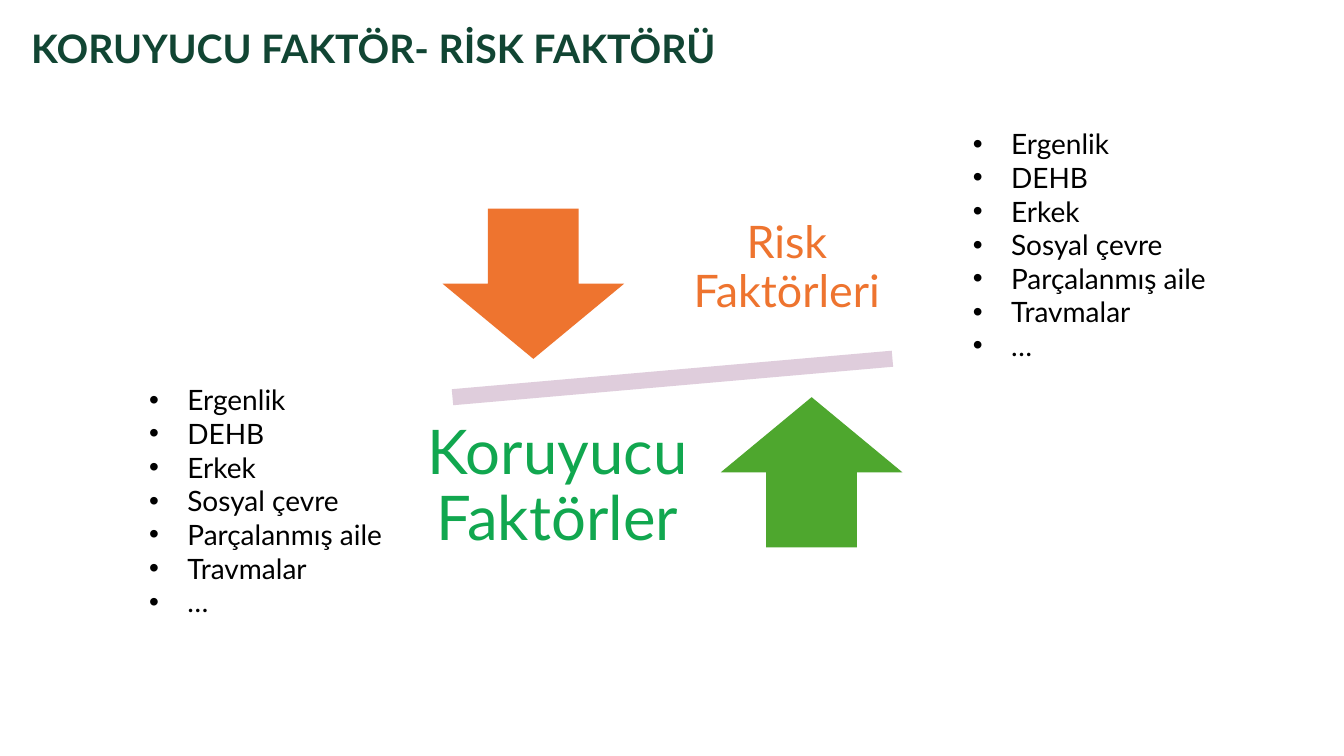
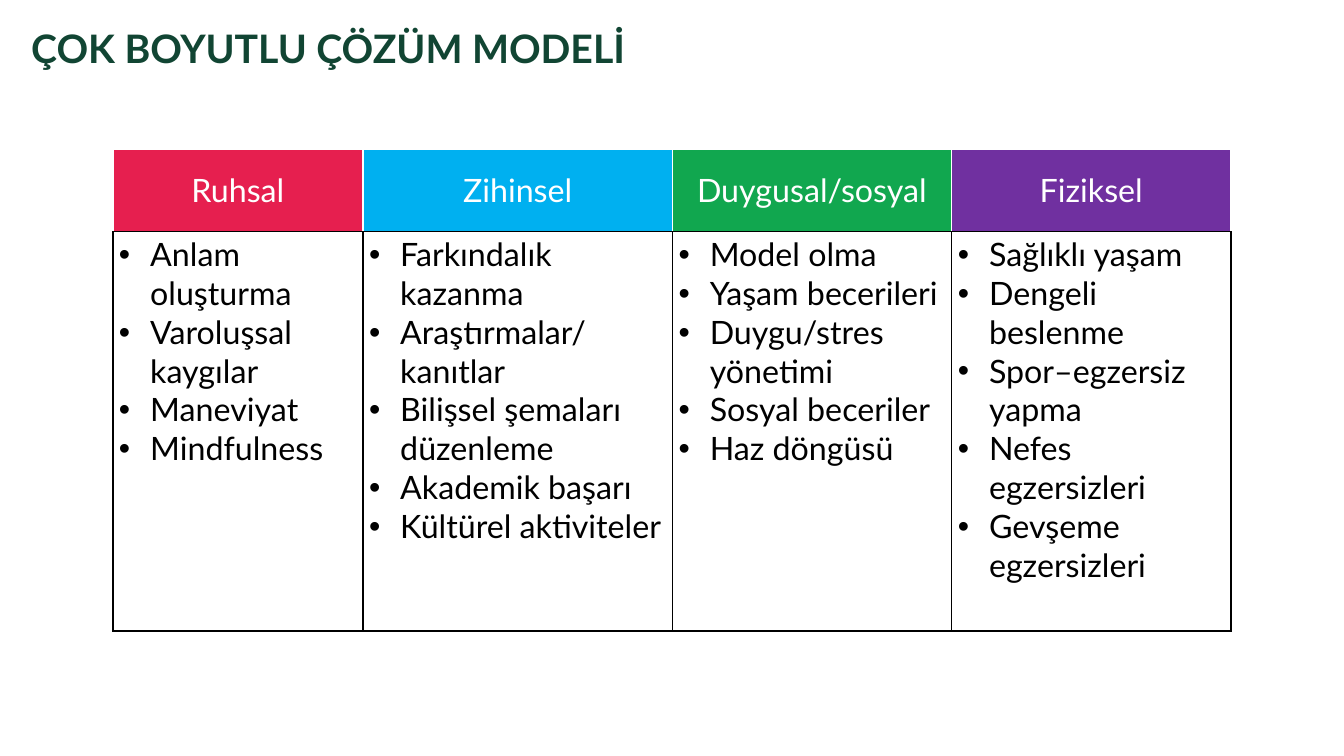
from dataclasses import dataclass

from lxml.etree import SubElement
from pptx import Presentation
from pptx.dml.color import RGBColor
from pptx.enum.shapes import MSO_SHAPE
from pptx.enum.text import MSO_ANCHOR, MSO_AUTO_SIZE, PP_ALIGN
from pptx.oxml.ns import qn
from pptx.presentation import Presentation as Deck
from pptx.slide import Slide
from pptx.table import _Cell as Cell
from pptx.text.text import TextFrame, _Paragraph as Paragraph
from pptx.util import Inches, Pt

FONT = "Lato"
BLACK, WHITE = "000000", "FFFFFF"
TITLE_GREEN, ORANGE, GREEN = "114533", "EE742F", "11A74F"
LEAF, MAUVE = "4EA72E", "DFCDDC"
FACTORS = ["Ergenlik", "DEHB", "Erkek", "Sosyal çevre", "Parçalanmış aile", "Travmalar", "…"]


@dataclass(frozen=True)
class Area:
    """A place on the slide, in inches."""

    left: float
    top: float
    width: float
    height: float

    def lengths(self) -> tuple[Inches, ...]:
        """Give the place as lengths."""
        return tuple(Inches(value) for value in (self.left, self.top, self.width, self.height))


@dataclass(frozen=True)
class BalancePart:
    """A solid shape of the balance."""

    kind: MSO_SHAPE
    area: Area
    fill: str
    rotation: float = 0


@dataclass(frozen=True)
class Label:
    """A large centred caption."""

    text: str
    area: Area
    size: int
    color: str
    inset: float


@dataclass(frozen=True)
class Dimension:
    """A column of the solution model."""

    name: str
    fill: str
    width: float
    points: list[str]


BALANCE = [
    BalancePart(MSO_SHAPE.MATH_MINUS, Area(3.69, 3.41, 5.96, 0.68), MAUVE, 355),
    BalancePart(MSO_SHAPE.DOWN_ARROW, Area(4.39, 2.07, 1.8, 1.49), ORANGE),
    BalancePart(MSO_SHAPE.UP_ARROW, Area(7.15, 3.94, 1.8, 1.49), LEAF),
]
LABELS = [
    Label("Risk Faktörleri", Area(6.44, 1.88, 2.73, 1.57), 32, ORANGE, 0.25),
    Label("Koruyucu Faktörler", Area(3.83, 4.05, 3.4, 1.57), 44, GREEN, 0.34),
]
FACTOR_AREAS = [Area(1.38, 3.75, 2.65, 2.46), Area(9.55, 1.21, 2.94, 2.46)]
TABLE_AREA = Area(1.12, 1.48, 11.09, 4.78)
HEADER_HEIGHT = 0.82
DIMENSIONS = [
    Dimension("Ruhsal", "E61F4F", 2.48, [
        "Anlam oluşturma", "Varoluşsal kaygılar", "Maneviyat", "Mindfulness"]),
    Dimension("Zihinsel", "00B0F0", 3.07, [
        "Farkındalık kazanma", "Araştırmalar/kanıtlar", "Bilişsel şemaları düzenleme",
        "Akademik başarı", "Kültürel aktiviteler"]),
    Dimension("Duygusal/sosyal", GREEN, 2.77, [
        "Model olma", "Yaşam becerileri", "Duygu/stres yönetimi",
        "Sosyal beceriler", "Haz döngüsü"]),
    Dimension("Fiziksel", "7030A0", 2.77, [
        "Sağlıklı yaşam", "Dengeli beslenme", "Spor–egzersiz yapma",
        "Nefes egzersizleri", "Gevşeme egzersizleri"]),
]


def rgb(color: str) -> RGBColor:
    """Turn a hex string into a colour."""
    return RGBColor.from_string(color)


def add_span(para: Paragraph, text: str, size: float, color: str, bold: bool = False) -> None:
    """Add one formatted run."""
    span = para.add_run()
    span.text = text
    span.font.name = FONT
    span.font.size = Pt(size)
    span.font.bold = bold
    span.font.color.rgb = rgb(color)


def add_bullets(frame: TextFrame, items: list[str], size: float, indent: float,
                align: PP_ALIGN) -> None:
    """Fill a frame with a bulleted list."""
    for index, item in enumerate(items):
        para = frame.add_paragraph() if index else frame.paragraphs[0]
        properties = para._p.get_or_add_pPr()
        properties.set("marL", str(Inches(indent)))
        properties.set("indent", str(-Inches(indent)))
        SubElement(properties, qn("a:buFont"), typeface="Arial")
        SubElement(properties, qn("a:buChar"), char="•")
        para.alignment = align
        add_span(para, item, size, BLACK)


def add_page(deck: Deck, title: str) -> Slide:
    """Add a page with the shared title style."""
    page = deck.slides.add_slide(deck.slide_layouts[5])
    box = page.shapes.title
    box.left, box.top, box.width, box.height = Area(0.21, 0.19, 10.58, 0.57).lengths()
    frame = box.text_frame
    frame.auto_size = MSO_AUTO_SIZE.NONE
    frame.vertical_anchor = MSO_ANCHOR.TOP
    para = frame.paragraphs[0]
    para.alignment = PP_ALIGN.LEFT
    add_span(para, title, 28, TITLE_GREEN, bold=True)
    return page


def add_frame(page: Slide, area: Area) -> TextFrame:
    """Add a wrapping text box and give its frame."""
    frame = page.shapes.add_textbox(*area.lengths()).text_frame
    frame.word_wrap = True
    return frame


def add_balance_part(page: Slide, part: BalancePart) -> None:
    """Draw one solid shape."""
    shape = page.shapes.add_shape(part.kind, *part.area.lengths())
    shape.shadow.inherit = False
    shape.rotation = part.rotation
    shape.fill.solid()
    shape.fill.fore_color.rgb = rgb(part.fill)
    shape.line.fill.background()


def add_label(page: Slide, label: Label) -> None:
    """Draw one large caption."""
    frame = add_frame(page, label.area)
    frame.vertical_anchor = MSO_ANCHOR.MIDDLE
    frame.margin_left = frame.margin_right = Inches(label.inset)
    frame.margin_top = frame.margin_bottom = Inches(label.inset)
    para = frame.paragraphs[0]
    para.alignment = PP_ALIGN.CENTER
    para.line_spacing = 0.9
    add_span(para, label.text, label.size, label.color)


def style_cell(cell: Cell, fill: str, side_color: str) -> None:
    """Set the margins, borders and fill of a cell."""
    cell.margin_left = cell.margin_right = Inches(0.06)
    cell.margin_top = cell.margin_bottom = Inches(0.03)
    properties = cell._tc.get_or_add_tcPr()
    for side in "LRTB":
        line = SubElement(properties, qn(f"a:ln{side}"), w=str(Pt(1)))
        solid = SubElement(line, qn("a:solidFill"))
        SubElement(solid, qn("a:srgbClr"), val=BLACK if side == "B" else side_color)
    cell.fill.solid()
    cell.fill.fore_color.rgb = rgb(fill)


def add_model_table(page: Slide) -> None:
    """Draw the table of dimensions."""
    table = page.shapes.add_table(2, len(DIMENSIONS), *TABLE_AREA.lengths()).table
    table.horz_banding = False
    table.rows[0].height = Inches(HEADER_HEIGHT)
    table.rows[1].height = Inches(TABLE_AREA.height - HEADER_HEIGHT)
    for index, dimension in enumerate(DIMENSIONS):
        table.columns[index].width = Inches(dimension.width)
        header, body = table.cell(0, index), table.cell(1, index)
        style_cell(header, dimension.fill, WHITE)
        header.vertical_anchor = MSO_ANCHOR.MIDDLE
        para = header.text_frame.paragraphs[0]
        para.alignment = PP_ALIGN.CENTER
        add_span(para, dimension.name, 23, WHITE)
        style_cell(body, WHITE, BLACK)
        add_bullets(body.text_frame, dimension.points, 23, 0.31, PP_ALIGN.LEFT)


def main() -> None:
    """Build and save the deck."""
    deck = Presentation()
    deck.slide_width, deck.slide_height = Inches(13.33), Inches(7.5)

    page = add_page(deck, "KORUYUCU FAKTÖR- RİSK FAKTÖRÜ")
    for part in BALANCE:
        add_balance_part(page, part)
    for label in LABELS:
        add_label(page, label)
    for area in FACTOR_AREAS:
        add_bullets(add_frame(page, area), FACTORS, 20, 0.38, PP_ALIGN.JUSTIFY)

    add_model_table(add_page(deck, "ÇOK BOYUTLU ÇÖZÜM MODELİ"))
    deck.save("out.pptx")


if __name__ == "__main__":
    main()
